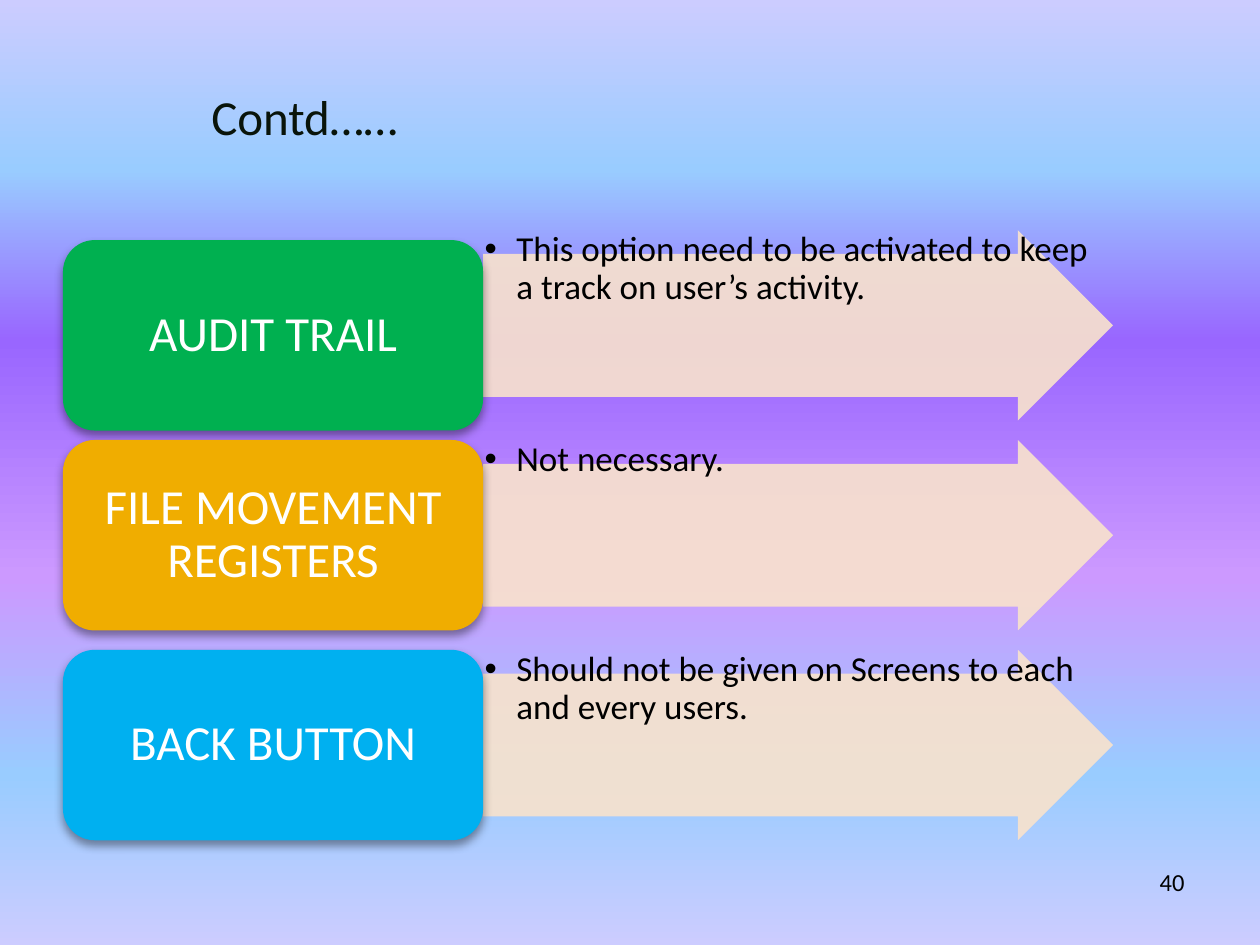
from lxml.etree import SubElement
from pptx import Presentation
from pptx.dml.color import RGBColor
from pptx.enum.shapes import MSO_SHAPE
from pptx.enum.text import MSO_ANCHOR, PP_ALIGN
from pptx.oxml.ns import qn
from pptx.util import Cm, Pt

TITLE = "Contd……"
PAGE = "40"
ROWS = [  # label, label colour, label offset from its arrow in cm, note
    ("AUDIT TRAIL", "00B050", 0.2,
     "This option need to be activated to keep a track on user’s activity."),
    ("FILE MOVEMENT REGISTERS", "F0AD00", 0, "Not necessary."),
    ("BACK BUTTON", "00B0F0", 0,
     "Should not be given on Screens to each and every users."),
]
BACKGROUND = [(0, "CCCCFF"), (18, "99CCFF"), (36, "9966FF"),
              (61, "CC99FF"), (82, "99CCFF"), (100, "CCCCFF")]

LABEL_X, LABEL_W = 1.27, 8.47
ARROW_X, ARROW_W = LABEL_X + LABEL_W, 12.7
ROW_Y, ROW_H, ROW_PITCH = 4.64, 3.84, 4.23


def rgb(value):
    return RGBColor.from_string(value)


def add(parent, tag, **attrs):
    return SubElement(parent, qn(tag), {k: str(v) for k, v in attrs.items()})


def paint_background(s):
    fill = s.background.fill
    fill.gradient()
    fill.gradient_angle = 270
    stops = next(s._element.iter(qn("a:gsLst")))
    for old in list(stops):
        stops.remove(old)
    for pos, color in BACKGROUND:
        add(add(stops, "a:gs", pos=pos * 1000), "a:srgbClr", val=color)


def add_block(s, kind, box, color):
    sp = s.shapes.add_shape(kind, *map(Cm, box))
    sp.shadow.inherit = False
    sp.fill.solid()
    sp.fill.fore_color.rgb = rgb(color)
    sp.line.fill.background()
    return sp


def set_text(sp, text, size, color, align=PP_ALIGN.LEFT,
             anchor=MSO_ANCHOR.TOP, spacing=1.0, insets=(0.25, 0.13)):
    tf = sp.text_frame
    tf.text = text
    tf.word_wrap = True
    tf.vertical_anchor = anchor
    tf.margin_left = tf.margin_right = Cm(insets[0])
    tf.margin_top = tf.margin_bottom = Cm(insets[1])
    p = tf.paragraphs[0]
    p.alignment = align
    p.line_spacing = spacing
    font = p.runs[0].font
    font.name, font.size, font.color.rgb = "Calibri", Pt(size), rgb(color)
    return p


def add_text(s, box, *args, **kwargs):
    return set_text(s.shapes.add_textbox(*map(Cm, box)), *args, **kwargs)


def add_arrow(s, y, note):
    box = (ARROW_X, y, ARROW_W, ROW_H)
    sp = add_block(s, MSO_SHAPE.RIGHT_ARROW, box, "F9E3CC")
    sp.adjustments[0], sp.adjustments[1] = 0.75, 0.5
    add(next(sp._element.spPr.iter(qn("a:srgbClr"))), "a:alpha", val=90000)
    p = add_text(s, box, note, 20, "000000", spacing=0.9, insets=(0.03, 0.03))
    pPr = p._p.get_or_add_pPr()
    pPr.set("marL", str(Cm(0.64)))
    pPr.set("indent", str(-Cm(0.64)))
    add(pPr, "a:buFont", typeface="Arial")
    add(pPr, "a:buChar", char="•")


def add_label(s, y, text, color):
    sp = add_block(s, MSO_SHAPE.ROUNDED_RECTANGLE,
                   (LABEL_X, y, LABEL_W, ROW_H), color)
    effects = sp._element.spPr.find(qn("a:effectLst"))
    shadow = add(effects, "a:outerShdw", blurRad=Pt(5.2), dist=Pt(3),
                 dir=5400000, rotWithShape=0)
    add(add(shadow, "a:srgbClr", val="000000"), "a:alpha", val=40000)
    set_text(sp, text, 28, "FFFFFF", PP_ALIGN.CENTER, MSO_ANCHOR.MIDDLE,
             spacing=0.9, insets=(0.3, 0.15))


def main():
    prs = Presentation()
    prs.slide_width, prs.slide_height = Cm(25.4), Cm(19.05)
    s = prs.slides.add_slide(prs.slide_layouts[6])
    paint_background(s)
    add_text(s, (4.01, 1.07, 17.58, 2.54), TITLE, 28, "09140A",
             anchor=MSO_ANCHOR.MIDDLE)
    for i, (label, color, offset, note) in enumerate(ROWS):
        y = ROW_Y + i * ROW_PITCH
        add_arrow(s, y, note)
        add_label(s, y + offset, label, color)
    add_text(s, (18.21, 17.35, 5.92, 1.32), PAGE, 14, "000000", PP_ALIGN.RIGHT)
    prs.save("out.pptx")


if __name__ == "__main__":
    main()
